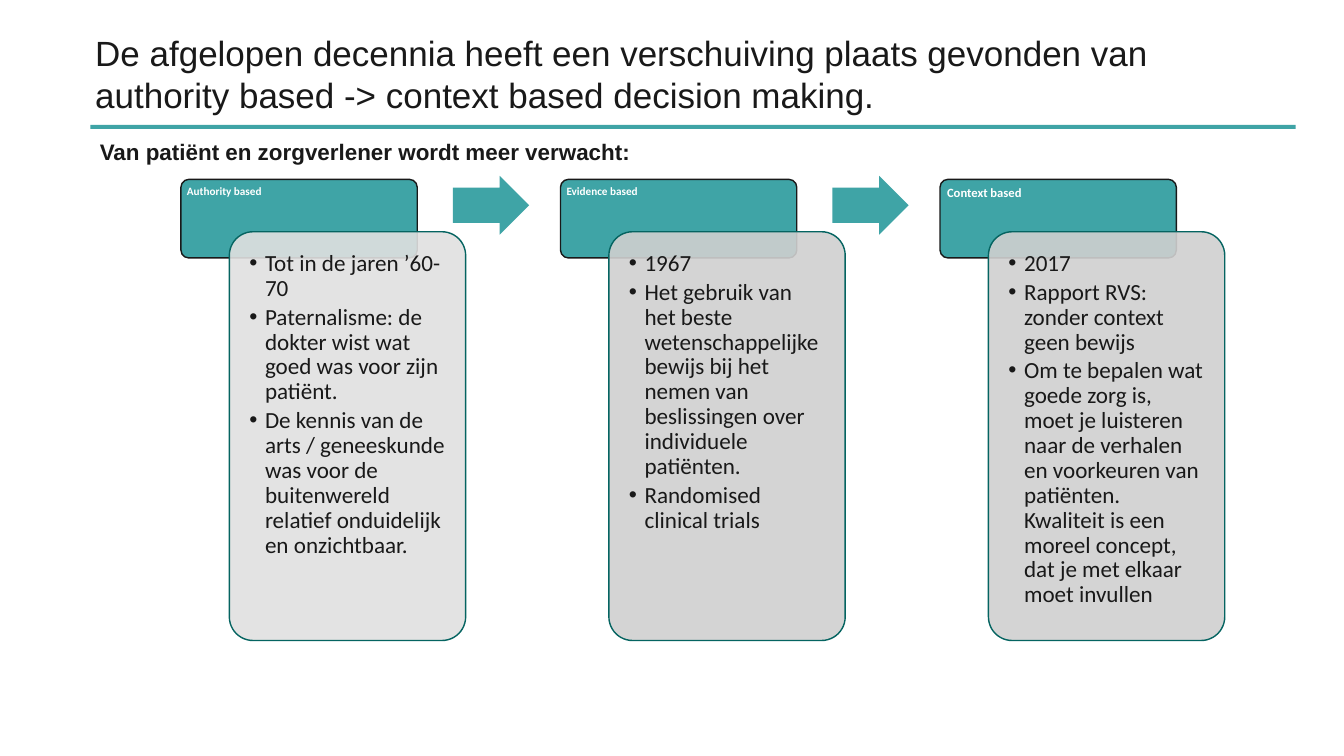
import pptx
import pptx.dml.color
import pptx.enum.shapes
import pptx.enum.text
import pptx.oxml.ns
import pptx.util
from lxml import etree

Cm = pptx.util.Cm
Pt = pptx.util.Pt
RGBColor = pptx.dml.color.RGBColor
Shape = pptx.enum.shapes.MSO_SHAPE
Anchor = pptx.enum.text.MSO_ANCHOR
Align = pptx.enum.text.PP_ALIGN
qn = pptx.oxml.ns.qn

TEAL = RGBColor(0x3F, 0xA4, 0xA6)
DARK_TEAL = RGBColor(0x05, 0x64, 0x61)
INK = RGBColor(0x19, 0x19, 0x19)
WHITE = RGBColor(0xFF, 0xFF, 0xFF)
LIGHT_GREY = RGBColor(0xE0, 0xE0, 0xE0)
GREY = RGBColor(0xD0, 0xD0, 0xD0)

STAGES = [
    ("Authority based", 16, 0.19, LIGHT_GREY, [
        "Tot in de jaren ’60-70",
        "Paternalisme: de dokter wist wat goed was voor zijn patiënt.",
        "De kennis van de arts / geneeskunde was voor de buitenwereld "
        "relatief onduidelijk en onzichtbaar."]),
    ("Evidence based", 16, 0.19, GREY, [
        "1967",
        "Het gebruik van het beste wetenschappelijke bewijs bij het nemen "
        "van beslissingen over individuele patiënten.",
        "Randomised clinical trials"]),
    ("Context based", 18, 0.24, GREY, [
        "2017",
        "Rapport RVS: zonder context geen bewijs",
        "Om te bepalen wat goede zorg is, moet je luisteren naar de verhalen "
        "en voorkeuren van patiënten. Kwaliteit is een moreel concept, dat je "
        "met elkaar moet invullen"]),
]
FIRST_LEFT = 9.12
STAGE_PITCH = 19.13
CARD_WIDTH = 11.91


class SlideBuilder:
    """Holds the style and the current slide, and adds its elements."""

    heading_font = "Arial"
    card_font = "Calibri"
    line_width = Pt(2)

    def __init__(self, page):
        self.page = page

    def add_span(self, para, text, font, size, color, bold=False):
        span = para.add_run()
        span.text = text
        span.font.name = font
        span.font.size = Pt(size)
        span.font.bold = bold
        span.font.color.rgb = color

    def heading(self, text, left, top, width, height, size, bold=False,
                anchor=Anchor.TOP):
        box = self.page.shapes.add_textbox(Cm(left), Cm(top), Cm(width), Cm(height))
        frame = box.text_frame
        frame.word_wrap = True
        frame.vertical_anchor = anchor
        self.add_span(frame.paragraphs[0], text, self.heading_font, size, INK, bold)

    def block(self, kind, left, top, width, height, fill, line=None, adjust=None):
        shape = self.page.shapes.add_shape(
            kind, Cm(left), Cm(top), Cm(width), Cm(height))
        shape.shadow.inherit = False
        shape.fill.solid()
        shape.fill.fore_color.rgb = fill
        if line is None:
            shape.line.fill.background()
        else:
            shape.line.color.rgb = line
            shape.line.width = self.line_width
        if adjust is not None:
            shape.adjustments[0] = adjust
        return shape

    def card_frame(self, shape, inset):
        frame = shape.text_frame
        frame.word_wrap = True
        frame.vertical_anchor = Anchor.TOP
        frame.margin_left = frame.margin_right = Cm(inset)
        frame.margin_top = frame.margin_bottom = Cm(inset)
        return frame

    def label(self, text, left, size, inset):
        shape = self.block(Shape.ROUNDED_RECTANGLE, left, 9.04, CARD_WIDTH, 3.96,
                           TEAL, INK, 0.1)
        para = self.card_frame(shape, inset).paragraphs[0]
        para.alignment = Align.LEFT
        para.line_spacing = 0.9
        self.add_span(para, text, self.card_font, size, WHITE, True)

    def card(self, items, left, fill):
        shape = self.block(Shape.ROUNDED_RECTANGLE, left, 11.68, CARD_WIDTH, 20.6,
                           fill, DARK_TEAL, 0.1)
        color = shape.element.spPr.find(qn("a:solidFill"))[0]
        etree.SubElement(color, qn("a:alpha")).set("val", "90000")
        frame = self.card_frame(shape, 0.66)
        for index, item in enumerate(items):
            para = frame.add_paragraph() if index else frame.paragraphs[0]
            self.bullet(para)
            self.add_span(para, item, self.card_font, 33, INK)

    def bullet(self, para):
        para.alignment = Align.LEFT
        para.line_spacing = 0.9
        para.space_after = Pt(5)
        properties = para._p.get_or_add_pPr()
        properties.set("marL", str(Cm(0.79)))
        properties.set("indent", str(-Cm(0.79)))
        etree.SubElement(properties, qn("a:buFont")).set("typeface", "Arial")
        etree.SubElement(properties, qn("a:buChar")).set("char", "•")

    def arrow(self, left):
        self.block(Shape.RIGHT_ARROW, left, 8.86, 3.84, 2.97, TEAL, adjust=0.6)


def main():
    deck = pptx.Presentation()
    deck.slide_width = Cm(67.74)
    deck.slide_height = Cm(38.1)
    builder = SlideBuilder(deck.slides.add_slide(deck.slide_layouts[6]))

    builder.block(Shape.RECTANGLE, 4.55, 6.3, 60.76, 0.2, TEAL)
    builder.heading("De afgelopen decennia heeft een verschuiving plaats gevonden "
                    "van authority based -> context based decision making.",
                    4.55, 1.45, 60.6, 4.52, 50, anchor=Anchor.MIDDLE)
    builder.heading("Van patiënt en zorgverlener wordt meer verwacht:",
                    4.78, 6.83, 46.4, 1.63, 32, bold=True)

    for index, (name, size, inset, fill, items) in enumerate(STAGES):
        left = FIRST_LEFT + index * STAGE_PITCH
        builder.label(name, left, size, inset)
        builder.card(items, left + 2.44, fill)
        if index < len(STAGES) - 1:
            builder.arrow(left + 13.71)

    deck.save("out.pptx")


if __name__ == "__main__":
    main()
